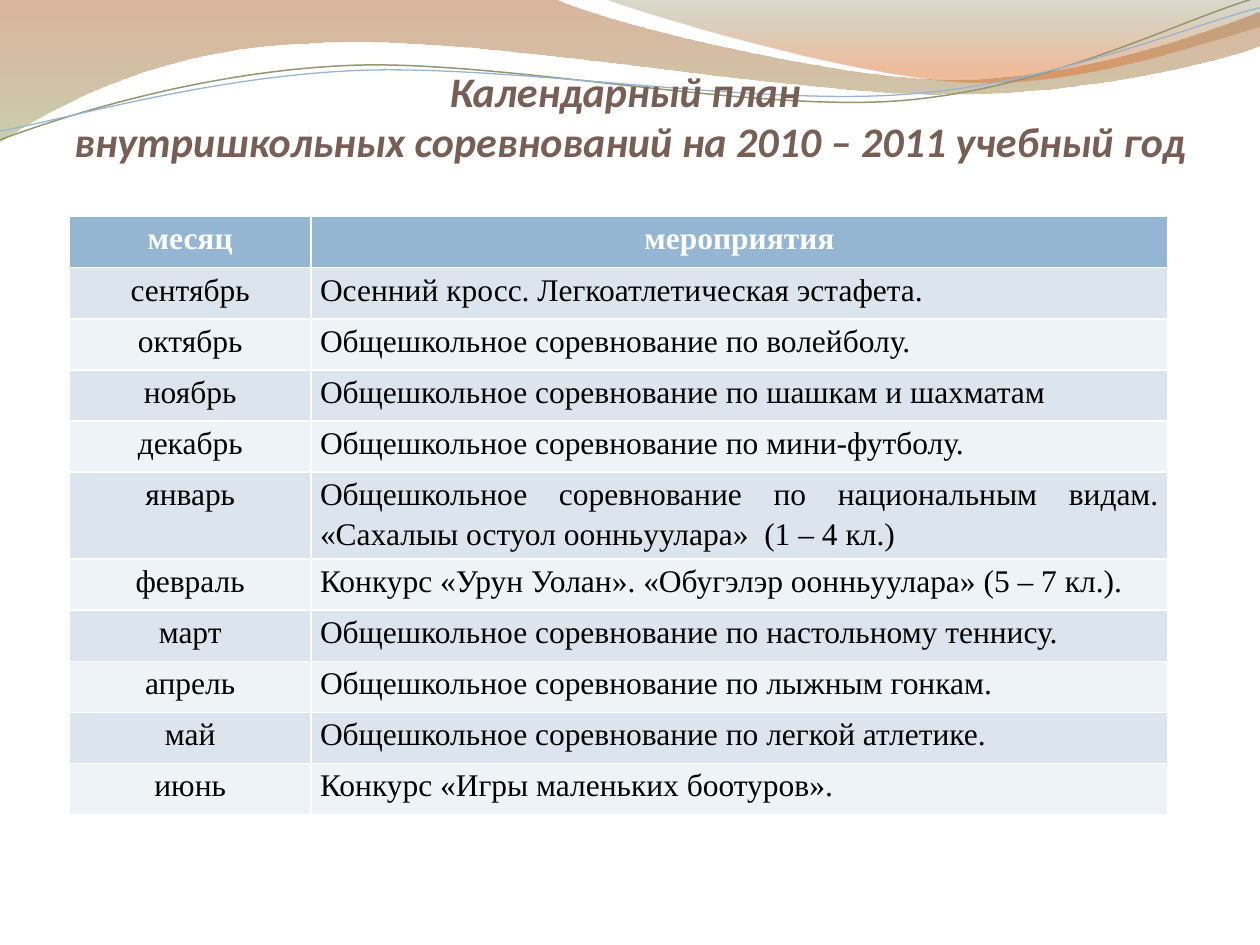
from dataclasses import dataclass
from math import cos, radians, sin

from lxml.etree import SubElement
from pptx import Presentation
from pptx.dml.color import RGBColor as Rgb
from pptx.enum.text import MSO_ANCHOR as Anchor, PP_ALIGN as Align
from pptx.oxml.ns import qn
from pptx.util import Pt


@dataclass(frozen=True)
class Theme:
    """Colours, fonts and type sizes of the slide."""
    title: str = "775F55"
    header: str = "94B6D2"
    bands: tuple = ("DCE5EE", "EEF3F7")
    white: str = "FFFFFF"
    black: str = "000000"
    olive: str = "929772"
    wave: tuple = ((0, "AF5C29", 45), (1, "9DA66B", 55))
    crest: tuple = ((0, "7D835B", 30), (0.8, "DD6B24", 45))
    title_font: str = "Calibri"
    table_font: str = "Times New Roman"
    title_size: int = 24
    table_size: int = 18


WAVE = [
    [(0, 0)], [(316.8, -0.7)],
    [(342.7, 12.2), (478.1, 45.4), (545.8, 45.4)],
    [(614.2, 45.4), (689.8, 18.7), (720, 6.5)],
    [(720.7, 25.9)],
    [(707.8, 31.7), (626.4, 54.7), (537.1, 54)],
    [(447.8, 54), (275, 20.2), (185, 24.5)],
    [(92.9, 25.9), (33.1, 59.8), (-0.7, 81.4)],
    [(0, 0)],
]
CREST = [
    [(344.9, -0.7)],
    [(366.5, 7.9), (491, 44.6), (553.7, 46.8)],
    [(616.3, 49.7), (691.9, 23), (720, 15.1)],
    [(720, 0)], [(344.9, -0.7)],
]
OLIVE_STRAND = [
    [(0, 79.9)],
    [(34.6, 67), (113.8, 41), (199.4, 37.4)],
    [(284.4, 33.8), (427, 64.1), (513.4, 57.6)],
    [(599.8, 51.1), (675.4, 10.8), (718.6, -1.4)],
]
BLUE_STRAND = [
    [(0, 74.9)],
    [(33.8, 69.1), (118.1, 43.9), (203.8, 40.3)],
    [(290.2, 36.7), (429.8, 60.5), (516.2, 54)],
    [(601.9, 48.2), (677.5, 15.1), (720, 4.3)],
]
TILT = 357.3
TITLE = ("Календарный план \v"
         "внутришкольных соревнований на 2010 – 2011 учебный год\v")
PLAN = [
    ("месяц", "мероприятия"),
    ("сентябрь", "Осенний кросс. Легкоатлетическая эстафета."),
    ("октябрь", "Общешкольное соревнование по волейболу."),
    ("ноябрь", "Общешкольное соревнование по шашкам и шахматам"),
    ("декабрь", "Общешкольное соревнование по мини-футболу."),
    ("январь", "Общешкольное соревнование по национальным видам. "
               "«Сахалыы остуол оонньуулара»  (1 – 4 кл.)"),
    ("февраль", "Конкурс «Урун Уолан». «Обугэлэр оонньуулара» (5 – 7 кл.)."),
    ("март", "Общешкольное соревнование по настольному теннису."),
    ("апрель", "Общешкольное соревнование по лыжным гонкам."),
    ("май", "Общешкольное соревнование по легкой атлетике."),
    ("июнь", "Конкурс «Игры маленьких боотуров»."),
]


def to_frame(point, frame, rotation):
    """Express a slide point in the frame of a rotated shape."""
    left, top, width, height = frame
    dx, dy = point[0] - left - width / 2, point[1] - top - height / 2
    turn = radians(-rotation)
    return (Pt(dx * cos(turn) - dy * sin(turn) + width / 2),
            Pt(dx * sin(turn) + dy * cos(turn) + height / 2))


class SlideWriter:
    """Draws styled elements on one slide."""

    def __init__(self, slide, theme):
        self.slide, self.theme = slide, theme

    def outline(self, pieces, frame, close, rotation=0):
        left, top, width, height = frame
        builder = self.slide.shapes.build_freeform(Pt(left), Pt(top))
        builder.add_line_segments([(Pt(left + width), Pt(top + height))], close=False)
        shape = builder.convert_to_shape()
        shape.shadow.inherit = False
        shape.rotation = rotation
        curve = next(shape._element.iter(qn("a:path")))
        for child in list(curve):
            curve.remove(child)
        for index, piece in enumerate(pieces):
            kind = "cubicBezTo" if len(piece) == 3 else "lnTo" if index else "moveTo"
            node = SubElement(curve, qn(f"a:{kind}"))
            for point in piece:
                x, y = to_frame(point, frame, rotation)
                SubElement(node, qn("a:pt"), x=str(x), y=str(y))
        if close:
            SubElement(curve, qn("a:close"))
        return shape

    def ribbon(self, pieces, frame, stops):
        shape = self.outline(pieces, frame, True)
        shape.line.fill.background()
        shape.fill.gradient()
        shape.fill.gradient_angle = 270
        for stop, (position, color, _) in zip(shape.fill.gradient_stops, stops):
            stop.position = position
            stop.color.rgb = Rgb.from_string(color)
        colors = list(shape._element.spPr.iter(qn("a:srgbClr")))
        for node, (_, _, opacity) in zip(colors, stops):
            SubElement(node, qn("a:alpha"), val=str(opacity * 1000))

    def strand(self, pieces, frame, color, width):
        shape = self.outline(pieces, frame, False, TILT)
        shape.fill.background()
        shape.line.color.rgb = Rgb.from_string(color)
        shape.line.width = Pt(width)

    def style(self, para, font, size, color, bold, italic=False):
        for span in para.runs:
            span.font.name, span.font.size = font, Pt(size)
            span.font.bold, span.font.italic = bold, italic
            span.font.color.rgb = Rgb.from_string(color)

    def title(self, text, left, top, width, height):
        theme = self.theme
        box = self.slide.shapes.add_textbox(Pt(left), Pt(top), Pt(width), Pt(height))
        frame = box.text_frame
        frame.word_wrap = True
        frame.vertical_anchor = Anchor.BOTTOM
        frame.margin_left = frame.margin_right = frame.margin_bottom = 0
        frame.margin_top = Pt(3.6)
        para = frame.paragraphs[0]
        para.text = text
        para.alignment = Align.CENTER
        self.style(para, theme.title_font, theme.title_size, theme.title, True, True)
        size = str(theme.title_size * 100)
        marks = [SubElement(node, qn("a:rPr"), sz=size)
                 for node in para._p.findall(qn("a:br"))]
        marks.append(SubElement(para._p, qn("a:endParaRPr"), sz=size))
        for mark in marks:
            SubElement(mark, qn("a:latin"), typeface=theme.title_font)

    def cell(self, cell, text, row, column):
        theme, header = self.theme, row == 0
        cell.fill.solid()
        cell.fill.fore_color.rgb = Rgb.from_string(
            theme.header if header else theme.bands[(row - 1) % 2])
        cell.margin_left = cell.margin_right = Pt(5.1)
        cell.margin_top = cell.margin_bottom = 0
        cell.text_frame.text = text
        para = cell.text_frame.paragraphs[0]
        para.alignment = Align.CENTER if header or column == 0 else Align.JUSTIFY
        para.line_spacing = 1.15
        self.style(para, theme.table_font, theme.table_size,
                   theme.white if header else theme.black, header)

    def table(self, rows, left, top, widths, row_height, height):
        holder = self.slide.shapes.add_table(
            len(rows), len(widths), Pt(left), Pt(top), Pt(sum(widths)), Pt(height))
        table = holder.table
        for column, width in zip(table.columns, widths):
            column.width = Pt(width)
        for r, texts in enumerate(rows):
            table.rows[r].height = Pt(row_height)
            for c, text in enumerate(texts):
                self.cell(table.cell(r, c), text, r, c)
        holder.height = Pt(height)


def main():
    """Build the competition calendar slide."""
    theme = Theme()
    deck = Presentation()
    deck.slide_width, deck.slide_height = Pt(720), Pt(540)
    page = SlideWriter(deck.slides.add_slide(deck.slide_layouts[6]), theme)
    page.ribbon(WAVE, (-0.7, -0.7, 721.4, 82.1), theme.wave)
    page.ribbon(CREST, (344.9, -0.7, 375.1, 50.4), theme.crest)
    page.strand(OLIVE_STRAND, (-1.4, 15.8, 721.4, 51.1), theme.olive, 0.85)
    page.strand(BLUE_STRAND, (-1.4, 21.6, 722.2, 41.8), theme.header, 0.75)
    page.title(TITLE, 36, 55.4, 648, 68.4)
    page.table(PLAN, 39.6, 123.8, (138.2, 489.6), 29.2, 342)
    deck.save("out.pptx")


if __name__ == "__main__":
    main()
